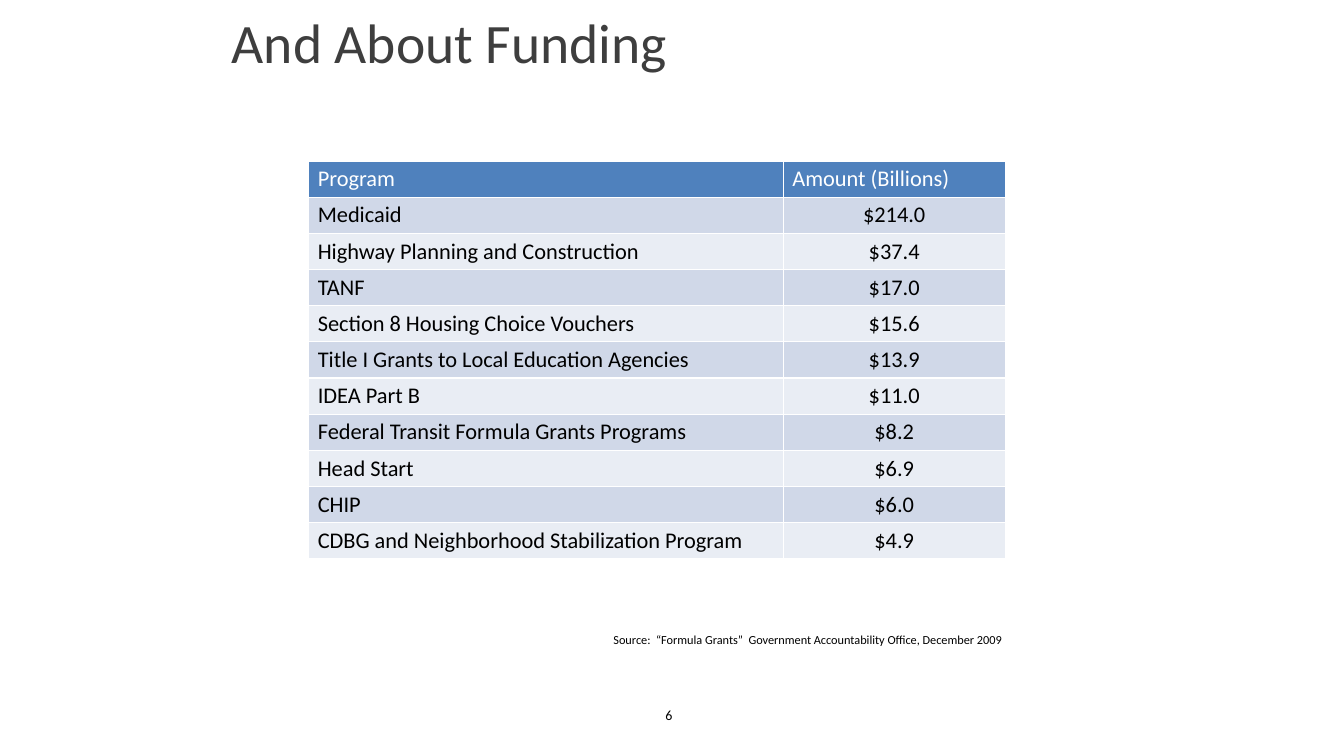
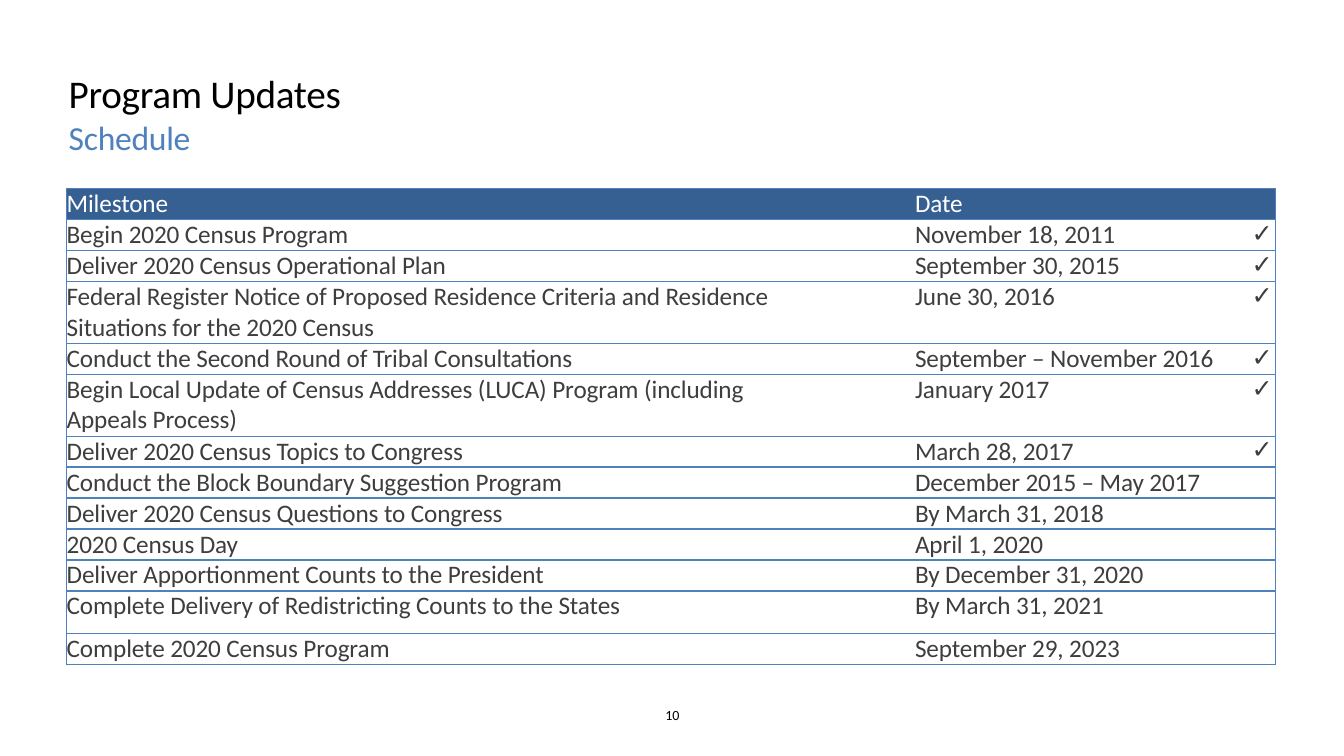
"""Build two slides on census-guided funding and the census program schedule."""
from lxml import etree
from pptx import Presentation
from pptx.dml.color import RGBColor
from pptx.enum.text import MSO_ANCHOR, MSO_AUTO_SIZE, PP_ALIGN
from pptx.oxml.ns import qn
from pptx.util import Cm, Pt

LEFT, CENTER = PP_ALIGN.LEFT, PP_ALIGN.CENTER
TOP = MSO_ANCHOR.TOP
NO_FIT = MSO_AUTO_SIZE.NONE
TITLE_ONLY = 5
PLAIN_TABLE = "{2D5ABB26-0587-4C30-8999-92F81FD0307C}"
SIDES = ("L", "R", "T", "B")
COLORS = {
    "black": "000000", "white": "FFFFFF", "gray": "3E3E3E", "blue": "4F81BD",
    "navy": "376092", "band_dark": "D0D8E8", "band_light": "E9EDF4",
}

FUNDING = [
    ("Program", "Amount (Billions)"),
    ("Medicaid", "$214.0"),
    ("Highway Planning and Construction", "$37.4"),
    ("TANF", "$17.0"),
    ("Section 8 Housing Choice Vouchers", "$15.6"),
    ("Title I Grants to Local Education Agencies", "$13.9"),
    ("IDEA Part B", "$11.0"),
    ("Federal Transit Formula Grants Programs", "$8.2"),
    ("Head Start", "$6.9"),
    ("CHIP", "$6.0"),
    ("CDBG and Neighborhood Stabilization Program", "$4.9"),
]
SCHEDULE = [
    ("Milestone", "Date", ""),
    ("Begin 2020 Census Program", "November 18, 2011", "✓"),
    ("Deliver 2020 Census Operational Plan", "September 30, 2015", "✓"),
    ("Federal Register Notice of Proposed Residence Criteria and Residence "
     "Situations for the 2020 Census", "June 30, 2016", "✓"),
    ("Conduct the Second Round of Tribal Consultations",
     "September – November 2016", "✓"),
    ("Begin Local Update of Census Addresses (LUCA) Program (including "
     "Appeals Process)", "January 2017", "✓"),
    ("Deliver 2020 Census Topics to Congress", "March 28, 2017", "✓"),
    ("Conduct the Block Boundary Suggestion Program",
     "December 2015 – May 2017", ""),
    ("Deliver 2020 Census Questions to Congress", "By March 31, 2018", ""),
    ("2020 Census Day", "April 1, 2020", ""),
    ("Deliver Apportionment Counts to the President",
     "By December 31, 2020", ""),
    ("Complete Delivery of Redistricting Counts to the States",
     "By March 31, 2021", ""),
    ("Complete 2020 Census Program", "September 29, 2023", ""),
]


class Deck:
    """Hold the shared style and the current slide."""

    font = "Calibri"

    def __init__(self):
        self.prs = Presentation()
        self.prs.slide_width, self.prs.slide_height = Cm(33.87), Cm(19.05)
        self.slide = None

    def new_slide(self, number):
        """Start a slide that carries its page number."""
        self.slide = self.prs.slides.add_slide(
            self.prs.slide_layouts[TITLE_ONLY])
        self.text(str(number), (16.69, 17.81, 0.8, 0.43), 10, inset=(0.08, 0))

    def style(self, paragraph, size, color, align=LEFT, tracking=0, font=None):
        """Format a paragraph and its runs."""
        paragraph.alignment = align
        for run in paragraph.runs:
            run.font.name = font or self.font
            run.font.size = Pt(size)
            run.font.color.rgb = RGBColor.from_string(COLORS[color])
            if tracking:
                run.font._element.get_or_add_rPr().set("spc", str(tracking)) \
                    if hasattr(run.font._element, "get_or_add_rPr") \
                    else run.font._element.set("spc", str(tracking))

    def title(self, lines, box, looks, inset=0, tracking=0):
        """Fill and place the title, with a size and colour for each line."""
        title = self.slide.shapes.title
        title.left, title.top, title.width, title.height = map(Cm, box)
        frame = title.text_frame
        frame.text = "\n".join(lines)
        self.fit(frame, (inset, 0))
        for paragraph, (size, color) in zip(frame.paragraphs, looks):
            self.style(paragraph, size, color, tracking=tracking)

    def text(self, words, box, size, inset):
        """Add a black one-line text box."""
        frame = self.slide.shapes.add_textbox(*map(Cm, box)).text_frame
        frame.text = words
        self.fit(frame, inset)
        self.style(frame.paragraphs[0], size, "black")

    def fit(self, frame, inset):
        """Set the shared frame rules and the side and top insets."""
        frame.word_wrap = True
        frame.auto_size = NO_FIT
        frame.vertical_anchor = TOP
        frame.margin_left = frame.margin_right = Cm(inset[0])
        frame.margin_top = frame.margin_bottom = Cm(inset[1])

    def table(self, rows, corner, widths, heights):
        """Add an unstyled table and return it."""
        table = self.slide.shapes.add_table(
            len(rows), len(widths), *map(Cm, corner),
            Cm(sum(widths)), Cm(sum(heights))).table
        table._tbl.tblPr.find(qn("a:tableStyleId")).text = PLAIN_TABLE
        table.first_row = table.horz_banding = False
        for column, width in zip(table.columns, widths):
            column.width = Cm(width)
        for row, height, words in zip(table.rows, heights, rows):
            row.height = Cm(height)
            for cell, word in zip(row.cells, words):
                cell.text = word
        return table

    def cell(self, cell, fill, margins, border, sides):
        """Set the fill, margins and borders of a cell."""
        cell.margin_left, cell.margin_right = map(Cm, margins[:2])
        cell.margin_top = cell.margin_bottom = Cm(margins[2])
        if fill:
            cell.fill.solid()
            cell.fill.fore_color.rgb = RGBColor.from_string(COLORS[fill])
        else:
            cell.fill.background()
        properties = cell._tc.get_or_add_tcPr()
        for place, side in enumerate(s for s in SIDES if s in sides):
            line = etree.Element(qn(f"a:ln{side}"), w=str(Pt(1)))
            solid = etree.SubElement(line, qn("a:solidFill"))
            etree.SubElement(solid, qn("a:srgbClr"), val=COLORS[border])
            properties.insert(place, line)


def funding_slide(deck):
    """Show the largest formula grants."""
    deck.new_slide(6)
    deck.title(["And About Funding"], (5.84, 0.2, 22.2, 3.18),
               [(39.7, "gray")])
    deck.text("Source:  “Formula Grants”  Government Accountability Office, "
              "December 2009", (15.21, 15.8, 12.73, 0.64), 8.8, (0.25, 0.13))
    table = deck.table(FUNDING, (7.78, 4.06), (11.96, 5.59),
                       [0.91] * len(FUNDING))
    for r, row in enumerate(table.rows):
        fill = ("band_light", "band_dark")[r % 2] if r else "blue"
        for c, cell in enumerate(row.cells):
            deck.cell(cell, fill, (0.23, 0.23, 0.11), "white", SIDES)
            deck.style(cell.text_frame.paragraphs[0], 16,
                       "black" if r else "white",
                       CENTER if r and c else LEFT)


def schedule_slide(deck):
    """Show the milestones and the ones already met."""
    deck.new_slide(10)
    deck.title(["Program Updates", "Schedule"], (1.55, 1.75, 30.76, 2.08),
               [(28, "black"), (24, "blue")], inset=0.18, tracking=-20)
    tall = {3: 1.56, 5: 1.56, 11: 1.07}
    table = deck.table(SCHEDULE, (1.68, 4.75), (21, 8.43, 1.04),
                       [tall.get(r, 0.78) for r in range(len(SCHEDULE))])
    margins = ((0, 2.3, 0), (0.38, 0, 0), (0.43, 0, 0))
    borders = ("LTB", "TB", "RTB")
    fonts = ("Calibri", "Calibri", "Arial")
    for r, row in enumerate(table.rows):
        for cell, margin, sides, font in zip(row.cells, margins, borders,
                                             fonts):
            deck.cell(cell, None if r else "navy", margin, "blue", sides)
            deck.style(cell.text_frame.paragraphs[0], 18,
                       "gray" if r else "white", tracking=-8, font=font)


def main():
    """Build and save the deck."""
    deck = Deck()
    funding_slide(deck)
    schedule_slide(deck)
    deck.prs.save("out.pptx")


if __name__ == "__main__":
    main()
